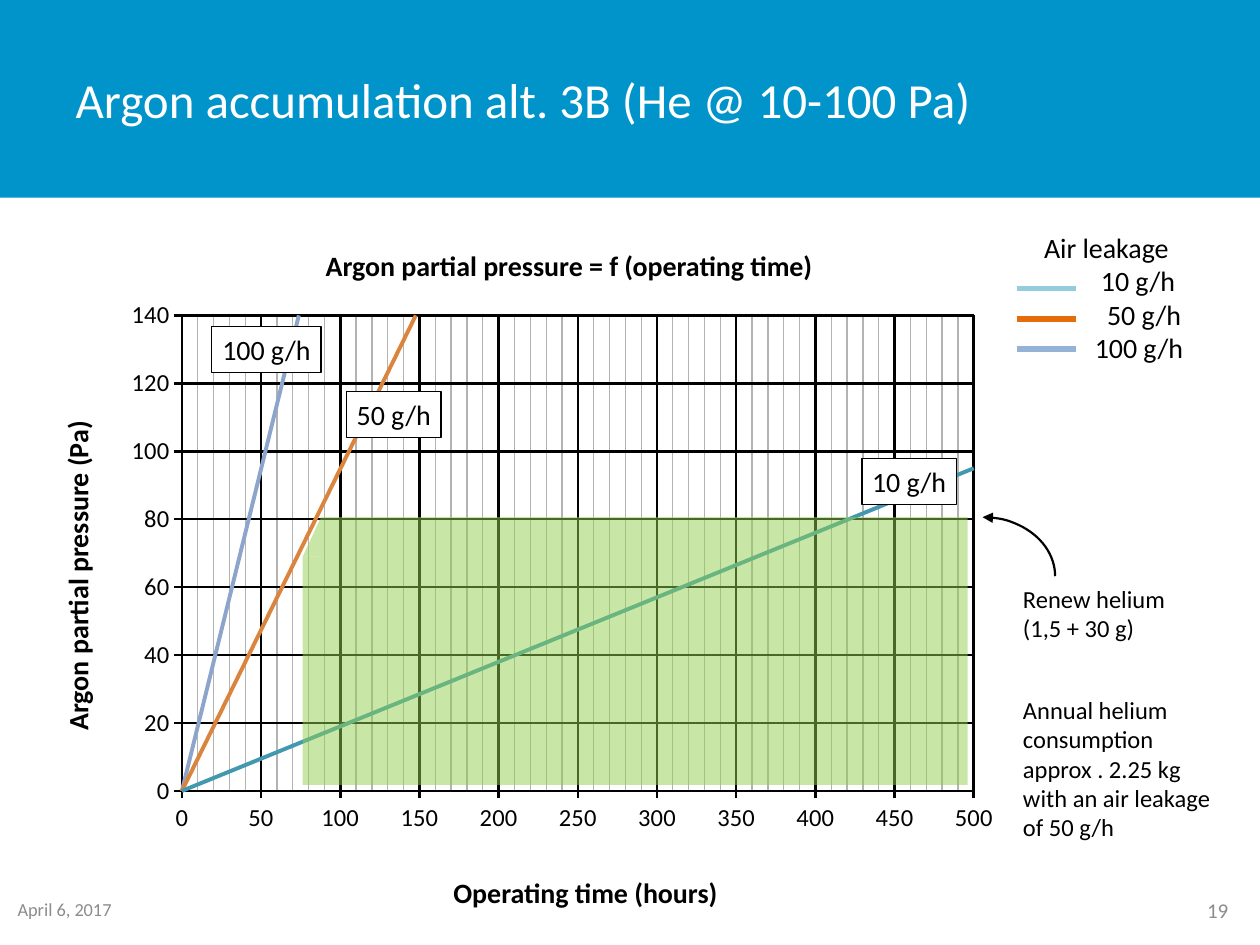
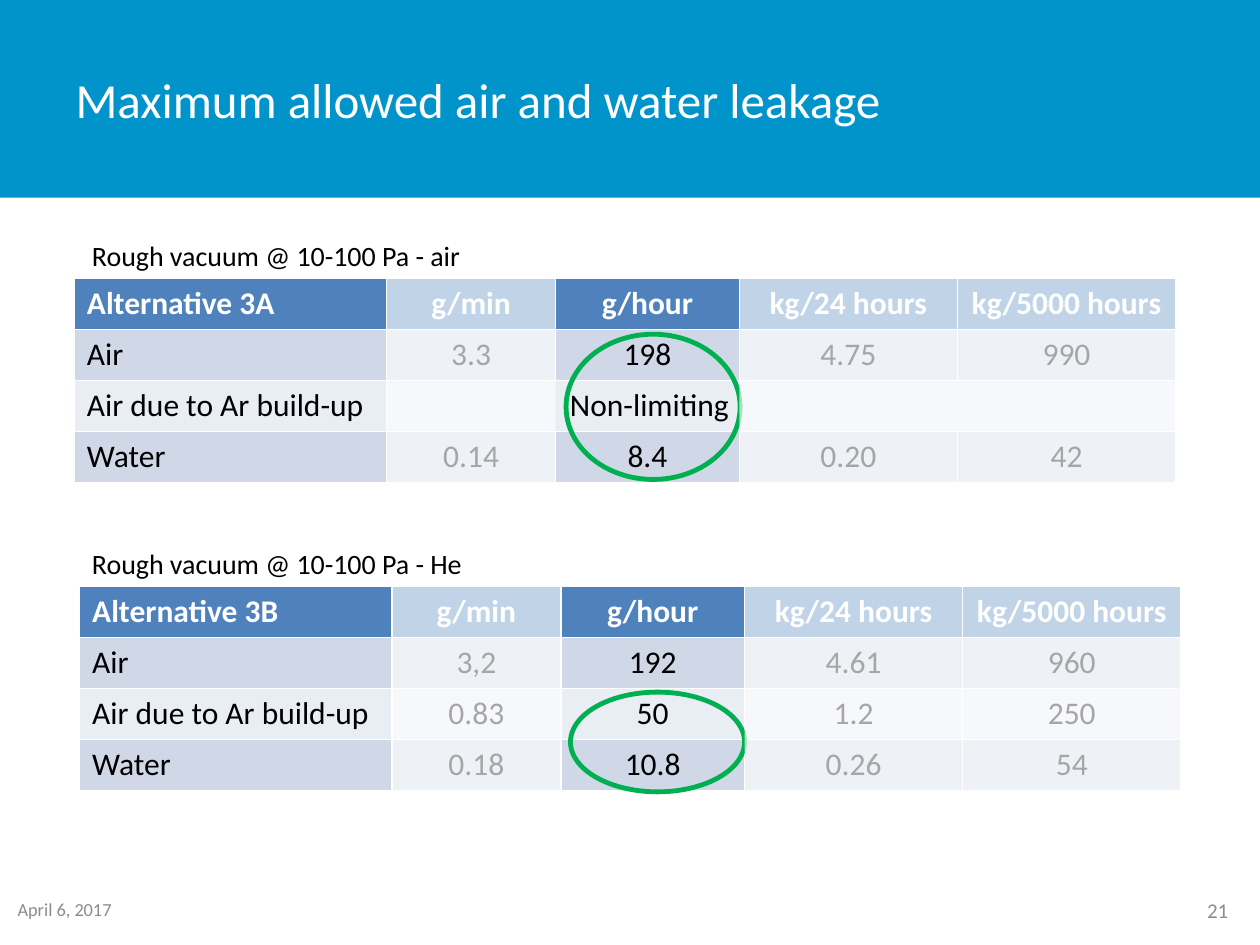
"""Build two slides on argon accumulation and allowed leakage."""
from lxml.etree import SubElement
from pptx import Presentation
from pptx.chart.data import XyChartData
from pptx.dml.color import RGBColor
from pptx.enum.chart import XL_CHART_TYPE as Kind, XL_TICK_MARK as Tick
from pptx.enum.shapes import MSO_CONNECTOR as Conn, MSO_SHAPE as Form
from pptx.enum.text import MSO_ANCHOR as Anchor, MSO_AUTO_SIZE as Fit, PP_ALIGN as Align
from pptx.oxml.ns import qn
from pptx.util import Pt

FONT = "Calibri"
BLACK = RGBColor(0, 0, 0)
WHITE = RGBColor(255, 255, 255)
BAND = RGBColor(0x00, 0x94, 0xCA)
GREY = RGBColor(0x8C, 0x8C, 0x8C)
MESH = RGBColor(0xB3, 0xB3, 0xB3)
LIME = RGBColor(0x92, 0xD0, 0x50)
GREEN = RGBColor(0x00, 0xB0, 0x50)
HEAD = RGBColor(0x4F, 0x81, 0xBD)
DARK = RGBColor(0xD0, 0xD8, 0xE8)
PALE = RGBColor(0xE9, 0xED, 0xF4)
CURVES = [RGBColor(0x41, 0x98, 0xAF), RGBColor(0xDB, 0x84, 0x3D), RGBColor(0x8E, 0xA5, 0xCB)]
KEYS = [RGBColor(0x93, 0xCD, 0xDD), RGBColor(0xE4, 0x6C, 0x0A), RGBColor(0x95, 0xB3, 0xD7)]


def label(slide, area, text, size=16, color=BLACK, bold=False, align=Align.LEFT, wrap=False):
    """Add a text box and return it."""
    box = slide.shapes.add_textbox(*map(Pt, area))
    frame = box.text_frame
    frame.text = text
    frame.word_wrap = wrap
    frame.auto_size = Fit.SHAPE_TO_FIT_TEXT
    for par in frame.paragraphs:
        par.alignment = align
        for run in par.runs:
            run.font.name, run.font.size, run.font.bold = FONT, Pt(size), bold
            run.font.color.rgb = color
    return box


def block(slide, form, area, fill=None, alpha=100):
    """Add a shape without outline, filled to the given opacity."""
    shape = slide.shapes.add_shape(form, *map(Pt, area))
    shape.shadow.inherit = False
    shape.line.fill.background()
    if fill is None:
        shape.fill.background()
    else:
        shape.fill.solid()
        shape.fill.fore_color.rgb = fill
        tint = shape.element.spPr.xpath("./a:solidFill/a:srgbClr")[0]
        SubElement(tint, qn("a:alpha"), val=str(alpha * 1000))
    return shape


deck = Presentation()
deck.slide_width, deck.slide_height = Pt(720), Pt(540)

pages = []
for heading, number in [("Argon accumulation alt. 3B (He @ 10-100 Pa)", "19"),
                        ("Maximum allowed air and water leakage", "21")]:
    slide = deck.slides.add_slide(deck.slide_layouts[5])
    title = slide.shapes.title
    title.left, title.top, title.width, title.height = Pt(36), Pt(33), Pt(554), Pt(47)
    title.text_frame.text = heading
    title.text_frame.vertical_anchor = Anchor.MIDDLE
    par = title.text_frame.paragraphs[0]
    par.alignment = Align.LEFT
    par.runs[0].font.name, par.runs[0].font.size = FONT, Pt(28)
    par.runs[0].font.color.rgb = WHITE
    title.element.addprevious(block(slide, Form.RECTANGLE, (0, 0, 720, 113), BAND).element)
    date = label(slide, (3, 505, 122, 29), "April 6, 2017", 10.5, GREY, wrap=True)
    count = label(slide, (646, 505.5, 63, 29), number, 12, GREY, align=Align.RIGHT, wrap=True)
    for foot in (date, count):
        foot.text_frame.auto_size = Fit.NONE
        foot.text_frame.vertical_anchor = Anchor.MIDDLE
    pages.append(slide)
graph, limits = pages

hours = range(0, 5001, 1000)
data = XyChartData()
for index, values in enumerate([(0, 190, 379, 569, 758, 948),
                                (0, 948, 1896, 2844, 3792, 4740),
                                (0, 1896, 3792, 5688, 7584, 9480)], 1):
    series = data.add_series(f"Series {index}")
    for hour, value in zip(hours, values):
        series.add_data_point(hour, value)
chart = graph.shapes.add_chart(Kind.XY_SCATTER_SMOOTH_NO_MARKERS, Pt(65.5), Pt(165),
                               Pt(512.5), Pt(317.5), data).chart
chart.has_legend = chart.has_title = False
chart.font.name, chart.font.size = FONT, Pt(14)
chart.font.color.rgb = BLACK
chart.plots[0].vary_by_categories = False
for series, color in zip(chart.plots[0].series, CURVES):
    series.format.line.color.rgb = color
    series.format.line.width = Pt(2.25)

across, upward = chart.category_axis, chart.value_axis
for axis, top, step, style in [(across, 500, 50, "#,##0"), (upward, 140, 20, "0")]:
    axis.minimum_scale, axis.maximum_scale, axis.major_unit = 0, top, step
    axis.has_title = False
    axis.has_major_gridlines = True
    axis.major_tick_mark, axis.minor_tick_mark = Tick.OUTSIDE, Tick.NONE
    axis.tick_labels.number_format = style
    axis.tick_labels.number_format_is_linked = False
    axis.tick_labels.font.size = Pt(14)
    for line in (axis.format.line, axis.major_gridlines.format.line):
        line.color.rgb, line.width = BLACK, Pt(1.5)
across.minor_unit = 10
across.has_minor_gridlines = True

plot = chart.element.chart.plotArea
minor = plot.find(".//" + qn("c:minorGridlines"))
stroke = SubElement(SubElement(minor, qn("c:spPr")), qn("a:ln"), w=str(int(Pt(0.75))))
SubElement(SubElement(stroke, qn("a:solidFill")), qn("a:srgbClr"), val=str(MESH))
for old in plot.findall(qn("c:layout")):
    plot.remove(old)
layout = SubElement(plot, qn("c:layout"))
plot.insert(0, layout)
manual = SubElement(layout, qn("c:manualLayout"))
for tag, value in [("layoutTarget", "inner"), ("xMode", "edge"), ("yMode", "edge"),
                   ("x", "0.075"), ("y", "0.048"), ("w", "0.883"), ("h", "0.856")]:
    SubElement(manual, qn("c:" + tag), val=value)

legend = label(graph, (589.5, 128, 95, 85), "Air leakage\n10 g/h\n50 g/h\n100 g/h")
for par, indent in zip(legend.text_frame.paragraphs, (0, 32.5, 36, 29)):
    par._p.get_or_add_pPr().set("marL", str(int(Pt(indent))))
for row, color in enumerate(KEYS):
    level = Pt(165 + 17.25 * row)
    key = graph.shapes.add_connector(Conn.STRAIGHT, Pt(581), level, Pt(615), level)
    key.line.color.rgb, key.line.width = color, Pt(3)
    SubElement(key._element.spPr, qn("a:effectLst"))

label(graph, (252, 497, 168, 27), "Operating time (hours)", bold=True)
label(graph, (179, 138.5, 297, 27), "Argon partial pressure = f (operating time)", bold=True)
label(graph, (-52.5, 314, 194, 27), "Argon partial pressure (Pa)", bold=True).rotation = 270

corner = block(graph, Form.ISOSCELES_TRIANGLE, (173, 295.5, 10.5, 22.5), LIME, 50)
corner.adjustments[0] = 1
block(graph, Form.RECTANGLE, (183.5, 295.5, 369.5, 153), LIME, 50)
block(graph, Form.RECTANGLE, (173, 318, 10.5, 130.5), LIME, 50)

label(graph, (577.5, 330, 125, 41), "Renew helium\v(1,5 + 30 g)", 14, wrap=True)
label(graph, (577.5, 393.5, 125, 92), "Annual helium consumption approx . 2.25 kg "
      "with an air leakage of 50 g/h", 14, wrap=True)
arc = block(graph, Form.ARC, (520, 295.5, 83, 67.5))
arc.line.color.rgb, arc.line.width = BLACK, Pt(1.25)
SubElement(arc.element.spPr.find(qn("a:ln")), qn("a:headEnd"), type="triangle")

for left, top, width, text in [(121, 186.5, 62.5, "100 g/h"), (198, 223.5, 54, "50 g/h"),
                               (492.5, 262, 54, "10 g/h")]:
    tag = label(graph, (left, top, width, 26.5), text, align=Align.CENTER, wrap=True)
    tag.text_frame.margin_left = tag.text_frame.margin_right = Pt(3)
    tag.fill.solid()
    tag.fill.fore_color.rgb = WHITE
    tag.line.color.rgb, tag.line.width = BLACK, Pt(0.75)

UNITS = ["g/min", "g/hour", "kg/24 hours", "kg/5000 hours"]
WIDTHS = [178.5, 96.5, 105, 124.65, 124.65]
TABLES = [
    (42.5, 159, "air", (323.5, 191, 99.5, 83), [
        ["Alternative 3A", *UNITS],
        ["Air", "3.3", "198", "4.75", "990"],
        ["Air due to Ar build-up", "Non-limiting", "", "", ""],
        ["Water", "0.14", "8.4", "0.20", "42"]]),
    (45.5, 335, "He", (326, 395.5, 99.5, 57), [
        ["Alternative 3B", *UNITS],
        ["Air", "3,2", "192", "4.61", "960"],
        ["Air due to Ar build-up", "0.83", "50", "1.2", "250"],
        ["Water", "0.18", "10.8", "0.26", "54"]]),
]
for left, top, gas, ring, rows in TABLES:
    table = limits.shapes.add_table(4, 5, Pt(left), Pt(top), Pt(sum(WIDTHS)), Pt(117)).table
    for column, width in zip(table.columns, WIDTHS):
        column.width = Pt(width)
    for r, texts in enumerate(rows):
        table.rows[r].height = Pt(29.2)
        wide = "" in texts
        if wide:
            table.cell(r, 1).merge(table.cell(r, 4))
        for c, text in enumerate(texts):
            cell = table.cell(r, c)
            cell.fill.solid()
            cell.fill.fore_color.rgb = (HEAD, DARK, PALE, DARK)[r]
            if not text:
                continue
            cell.text_frame.text = text
            par = cell.text_frame.paragraphs[0]
            par.alignment = Align.CENTER if c and not wide else Align.LEFT
            if c and wide:
                par._p.get_or_add_pPr().set("marL", str(int(Pt(97.5))))
            font = par.runs[0].font
            font.name, font.size, font.bold = FONT, Pt(18), r == 0
            font.color.rgb = BLACK if r else WHITE
    oval = block(limits, Form.OVAL, ring)
    oval.line.color.rgb, oval.line.width = GREEN, Pt(2.75)
    label(limits, (45.5, top - 26.5, 227.5, 26.5), f"Rough vacuum @ 10-100 Pa - {gas}")
    for first, last in [(1, 2), (3, 5)]:
        area = (left + sum(WIDTHS[:first]), top, sum(WIDTHS[first:last]), 117)
        block(limits, Form.RECTANGLE, area, WHITE, 65)

deck.save("out.pptx")
